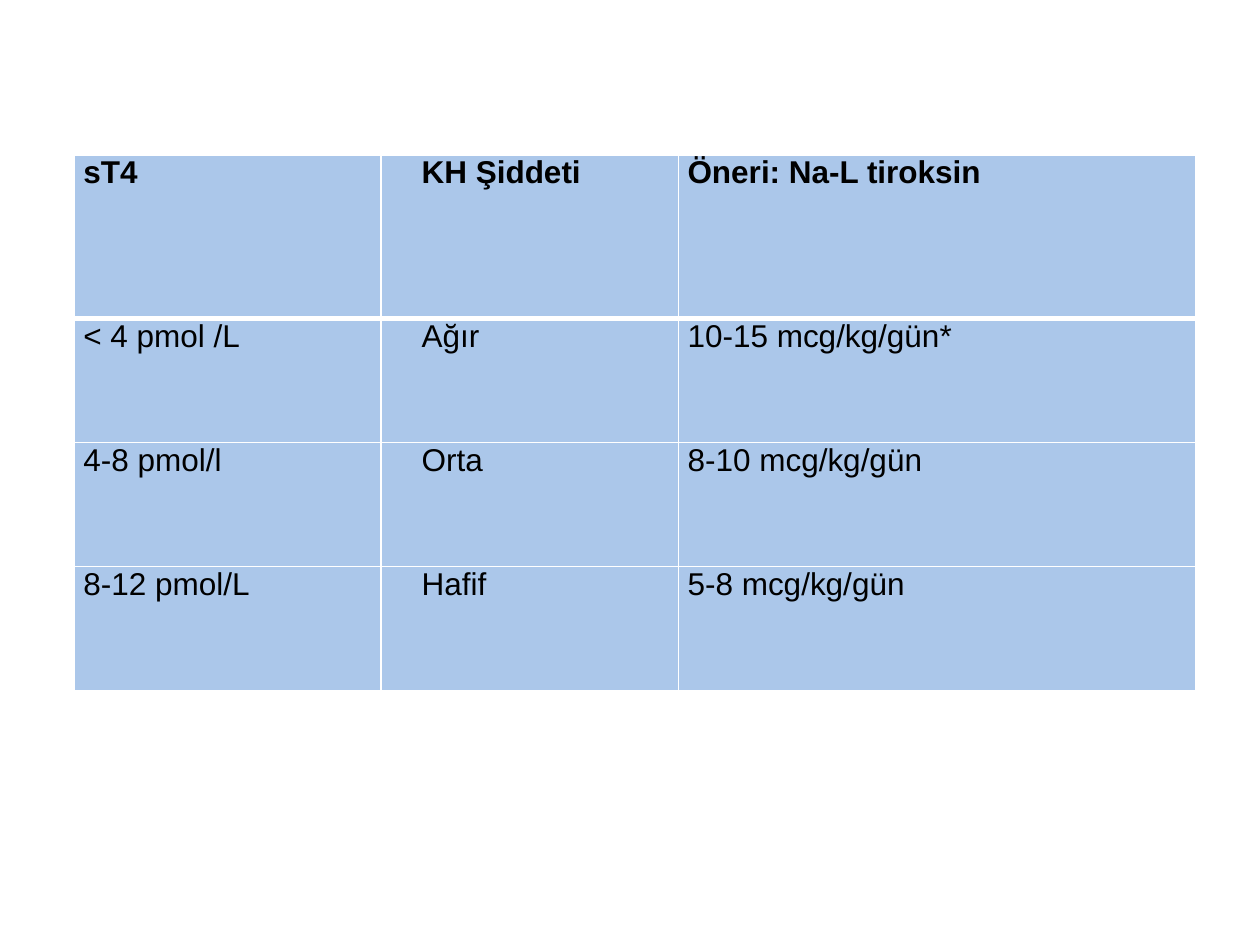
from lxml import etree
from pptx import Presentation
from pptx.dml.color import RGBColor
from pptx.oxml.ns import qn
from pptx.util import Cm, Pt

BLANK = 6
FONT, SIZE = "Arial", 18
TEXT, FILL, BORDER = "000000", "558ED5", "FFFFFF"
FILL_ALPHA = 49  # percent
SEVERITY_COL, SEVERITY_INDENT = 1, 0.64

ROWS = [
    ("sT4", "KH Şiddeti", "Öneri: Na-L tiroksin"),
    ("< 4 pmol /L", "Ağır", "10-15 mcg/kg/gün*"),
    ("4-8 pmol/l", "Orta", "8-10 mcg/kg/gün"),
    ("8-12 pmol/L", "Hafif", "5-8 mcg/kg/gün"),
]
LEFT, TOP = 1.5, 3.12
COL_WIDTHS = [6.18, 6.0, 10.43]
ROW_HEIGHTS = [3.3] + [2.5] * 3


def rgb(value):
    return RGBColor.from_string(value)


def fill_cell(cell):
    cell.fill.solid()
    cell.fill.fore_color.rgb = rgb(FILL)
    clr = cell._tc.tcPr.find(".//" + qn("a:srgbClr"))
    etree.SubElement(clr, qn("a:alpha"), val=str(FILL_ALPHA * 1000))


def set_borders(cell, bottom):
    """Line all four sides; the line elements must come before the fill."""
    widths = {"lnL": 1, "lnR": 1, "lnT": 1, "lnB": bottom}
    for i, (side, width) in enumerate(widths.items()):
        ln = etree.Element(qn("a:" + side), w=str(Pt(width)))
        solid = etree.SubElement(ln, qn("a:solidFill"))
        etree.SubElement(solid, qn("a:srgbClr"), val=BORDER)
        cell._tc.tcPr.insert(i, ln)


def write_cell(cell, text, bold, indent):
    cell.margin_left = cell.margin_right = Cm(0.18)
    cell.margin_top = cell.margin_bottom = 0
    p = cell.text_frame.paragraphs[0]
    if indent:
        pPr = p._p.get_or_add_pPr()
        pPr.set("marL", str(Cm(indent)))
        pPr.set("indent", "0")
    r = p.add_run()
    r.text = text
    r.font.name, r.font.size, r.font.bold = FONT, Pt(SIZE), bold
    r.font.color.rgb = rgb(TEXT)


def main():
    prs = Presentation()
    prs.slide_width, prs.slide_height = Cm(25.4), Cm(19.05)
    s = prs.slides.add_slide(prs.slide_layouts[BLANK])

    table = s.shapes.add_table(
        len(ROWS), len(COL_WIDTHS), Cm(LEFT), Cm(TOP),
        Cm(sum(COL_WIDTHS)), Cm(sum(ROW_HEIGHTS))).table
    table.horz_banding = False
    for col, width in zip(table.columns, COL_WIDTHS):
        col.width = Cm(width)
    for row, height in zip(table.rows, ROW_HEIGHTS):
        row.height = Cm(height)

    for i, texts in enumerate(ROWS):
        header = i == 0
        for j, text in enumerate(texts):
            cell = table.cell(i, j)
            write_cell(cell, text, header,
                       SEVERITY_INDENT if j == SEVERITY_COL else 0)
            fill_cell(cell)
            set_borders(cell, 3 if header else 1)

    prs.save("out.pptx")


if __name__ == "__main__":
    main()
